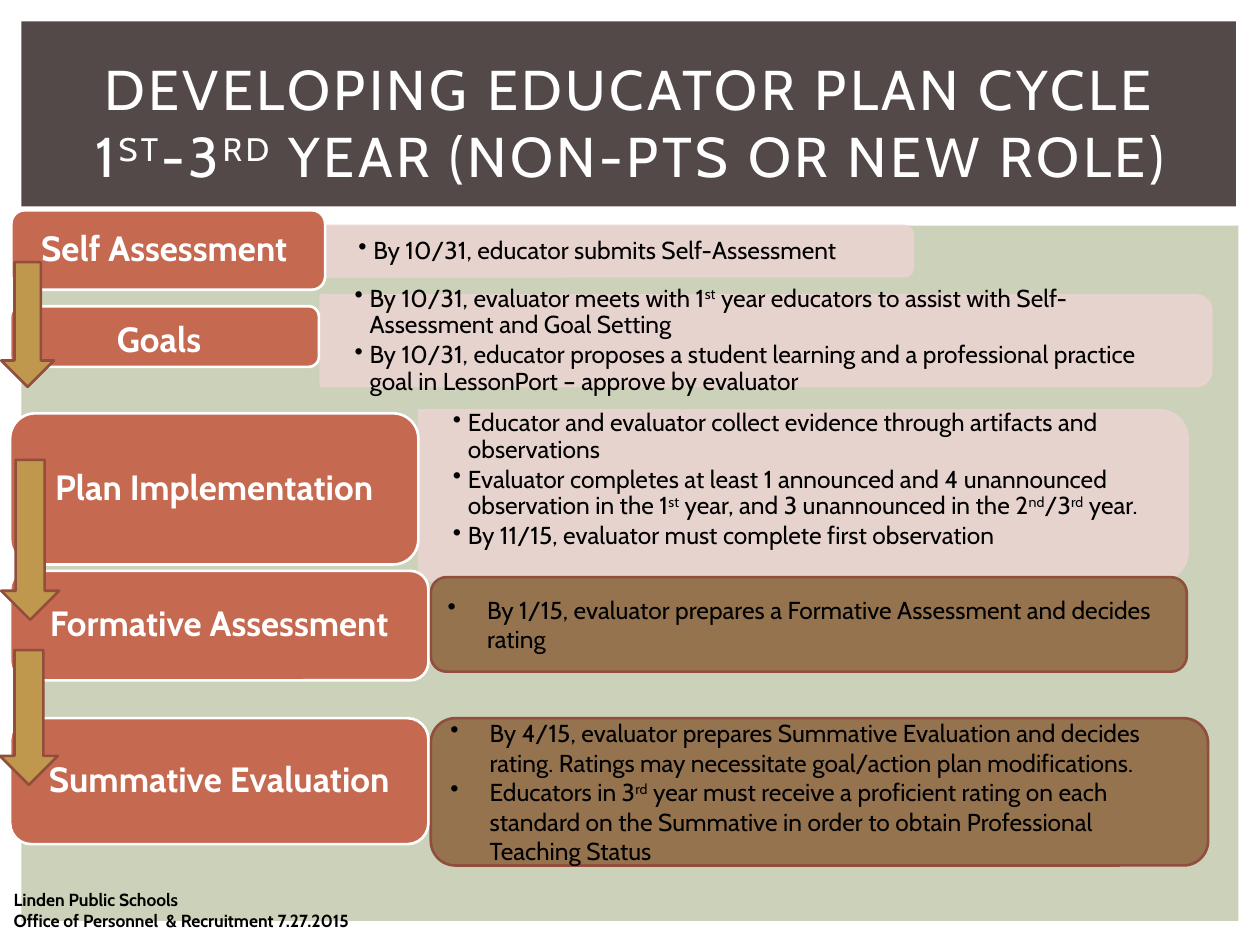
import pptx
import pptx.util
import pptx.dml.color
import pptx.enum.shapes
import pptx.enum.text
import pptx.oxml
import pptx.oxml.ns
from dataclasses import dataclass

Pt = pptx.util.Pt
KIND = pptx.enum.shapes.MSO_SHAPE
ALIGN = pptx.enum.text.PP_ALIGN
MIDDLE = pptx.enum.text.MSO_ANCHOR.MIDDLE


@dataclass(frozen=True)
class Theme:
    font: str = "Cabin"
    white: str = "FFFFFF"
    black: str = "000000"
    dark: str = "534949"
    sage: str = "CCD1B9"
    pink: str = "EAD4D0"
    coral: str = "C66951"
    brown: str = "94734E"
    gold: str = "BF974D"
    rust: str = "924E3C"
    title: int = 32
    label: int = 20
    body: int = 14
    foot: int = 10
    edge: float = 1.5


THEME = Theme()


def rgb(code):
    return pptx.dml.color.RGBColor.from_string(code)


def shape(slide, kind, box, fill, line=None):
    item = slide.shapes.add_shape(kind, *map(Pt, box))
    item.shadow.inherit = False
    item.fill.solid()
    item.fill.fore_color.rgb = rgb(fill)
    if line:
        item.line.color.rgb = rgb(line)
        item.line.width = Pt(THEME.edge)
    else:
        item.line.fill.background()
    return item


def textbox(slide, box):
    return slide.shapes.add_textbox(*map(Pt, box))


def setup(item, side=7.2, edge=3.6):
    frame = item.text_frame
    frame.word_wrap = True
    frame.vertical_anchor = MIDDLE
    frame.margin_left = frame.margin_right = Pt(side)
    frame.margin_top = frame.margin_bottom = Pt(edge)
    return frame


def write(para, text, size, color, bold=False, align=ALIGN.LEFT):
    """Fill a paragraph; parts between ^ marks are superscript."""
    para.alignment = align
    font = para.font
    font.name, font.size, font.bold = THEME.font, Pt(size), bold
    font.color.rgb = rgb(color)
    for num, part in enumerate(text.split("^")):
        for spot, line in enumerate(part.split("\n")):
            if spot:
                para.add_line_break()
            run = para.add_run()
            run.text = line
            if num % 2:
                run._r.get_or_add_rPr().set("baseline", "30000")


def bullets(frame, lines, indent, tight=False):
    for num, line in enumerate(lines):
        para = frame.add_paragraph() if num else frame.paragraphs[0]
        write(para, line, THEME.body, THEME.black)
        if tight:
            para.line_spacing = 0.9
            para.space_after = Pt(2.1)
        props = para._p.get_or_add_pPr()
        props.set("marL", str(Pt(indent)))
        props.set("indent", str(Pt(-indent)))
        mark = pptx.oxml.parse_xml(
            '<a:buChar %s char="•"/>' % pptx.oxml.ns.nsdecls("a"))
        props.insert_element_before(mark, "a:tabLst", "a:defRPr", "a:extLst")


def header(slide, box):
    x, y, w, h = box
    shape(slide, KIND.RECTANGLE, box, THEME.dark)
    frame = setup(textbox(slide, (x + 18, y + 16, w - 34, 82.8)))
    para = frame.paragraphs[0]
    write(para, "DEVELOPING EDUCATOR PLAN CYCLE\n1^ST^-3^RD^ YEAR (NON-PTS OR NEW ROLE)",
          THEME.title, THEME.white, align=ALIGN.CENTER)
    for run in para.runs:
        run._r.get_or_add_rPr().set("spc", "200")


def band(slide, box, lines, lift=0):
    """Pink panel, rounded on the right by a quarter turn."""
    x, y, w, h = box
    turned = (x + (w - h) / 2, y + (h - w) / 2, h, w)
    panel = shape(slide, KIND.ROUND_2_SAME_RECTANGLE, turned, THEME.pink, THEME.pink)
    panel.rotation = 90
    for tint in panel._element.spPr.iter(pptx.oxml.ns.qn("a:srgbClr")):
        tint.append(pptx.oxml.parse_xml(
            '<a:alpha %s val="90000"/>' % pptx.oxml.ns.nsdecls("a")))
    item = textbox(slide, (x, y - lift, w - 0.05 * h, h))
    bullets(setup(item, 19.4, 0), lines, 8.6, tight=True)


def note(slide, box, lines):
    item = shape(slide, KIND.ROUNDED_RECTANGLE, box, THEME.brown, THEME.rust)
    bullets(setup(item), lines, 22.5)


def label(slide, box, text, tail=None):
    item = shape(slide, KIND.ROUNDED_RECTANGLE, box, THEME.coral, THEME.white)
    para = setup(item, 6, 3).paragraphs[0]
    write(para, text, THEME.label, THEME.white, True, ALIGN.CENTER)
    para.line_spacing = 0.9
    if tail:
        run = para.add_run()
        run.text = " "
        run.font.size, run.font.bold = Pt(tail), False


def step(slide, box, text, panel, place, lines, tail=None, **more):
    """One stage: its label, and a panel placed from the label's corner."""
    dx, dy, w, h = place
    panel(slide, (box[0] + dx, box[1] + dy, w, h), lines, **more)
    label(slide, box, text, tail)


def footer(slide, box):
    frame = setup(textbox(slide, box))
    write(frame.paragraphs[0], "Linden Public Schools", THEME.foot, THEME.black, True)
    write(frame.add_paragraph(), "Office of Personnel  & Recruitment 7.27.2015",
          THEME.foot, THEME.black, True)


def main():
    deck = pptx.Presentation()
    deck.slide_width, deck.slide_height = Pt(720), Pt(540)
    slide = deck.slides.add_slide(deck.slide_layouts[6])

    # Backdrop and title
    shape(slide, KIND.RECTANGLE, (12.2, 128.9, 695.5, 397.4), THEME.sage)
    header(slide, (12.2, 12.2, 694, 105.8))

    # Stages of the cycle
    step(slide, (6.5, 120.2, 179.3, 45.4), "Self Assessment ",
         band, (178.9, 9, 336.2, 28.8),
         ["By 10/31, educator submits Self-Assessment"])
    step(slide, (5.8, 175, 176.4, 34.6), "Goals",
         band, (177.4, -6.2, 509, 51.8),
         ["By 10/31, evaluator meets with 1^st^ year educators to assist with "
          "Self-Assessment and Goal Setting",
          "By 10/31, educator proposes a student learning and a professional "
          "practice goal in LessonPort – approve by evaluator"], tail=28)
    step(slide, (5.8, 236.2, 233.3, 86.4), "Plan Implementation",
         band, (233.6, -1.8, 439.2, 97.2),
         ["Educator and evaluator collect evidence through artifacts and observations",
          "Evaluator completes at least 1 announced and 4 unannounced observation "
          "in the 1^st^ year, and 3 unannounced in the 2^nd^/3^rd^ year.",
          "By 11/15, evaluator must complete first observation"], lift=8.5)
    step(slide, (5.8, 326.2, 239, 62.6), "Formative Assessment",
         note, (240.4, 3.6, 432, 54),
         ["By 1/15, evaluator prepares a Formative Assessment and decides rating"])
    step(slide, (5.8, 410.4, 239, 72), "Summative Evaluation",
         note, (240.4, 0, 444.2, 84.2),
         ["By 4/15, evaluator prepares Summative Evaluation and decides rating. "
          "Ratings may necessitate goal/action plan modifications.",
          "Educators in 3^rd^ year must receive a proficient rating on each standard "
          "on the Summative in order to obtain Professional Teaching Status"])

    # Arrows down the left edge
    for box in ((0.7, 149.8, 30.2, 71.3), (0.7, 262.8, 33.1, 91.4),
                (0, 371.5, 33.1, 77)):
        shape(slide, KIND.DOWN_ARROW, box, THEME.gold, THEME.rust)

    footer(slide, (0.7, 504, 212.4, 31.7))
    deck.save("out.pptx")


if __name__ == "__main__":
    main()
